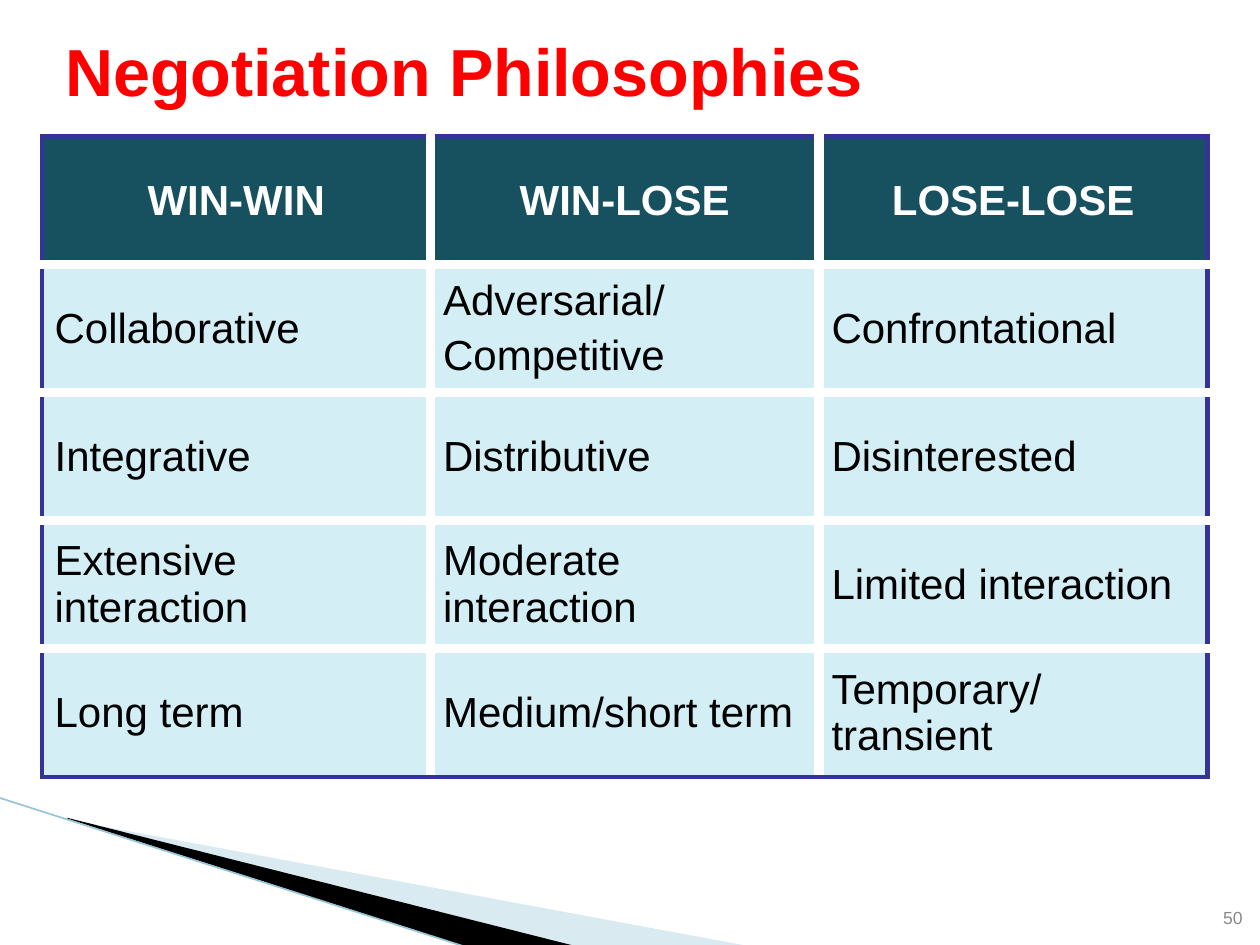
from dataclasses import dataclass

import lxml.etree
import pptx
import pptx.dml.color
import pptx.enum.shapes
import pptx.enum.text
import pptx.oxml
import pptx.oxml.ns
import pptx.util

Pt = pptx.util.Pt
qn = pptx.oxml.ns.qn
Align = pptx.enum.text.PP_ALIGN
Anchor = pptx.enum.text.MSO_ANCHOR


@dataclass(frozen=True)
class Theme:
    font: str = "Arial"
    title: str = "FF0000"
    header: str = "175160"
    body: str = "D3EEF5"
    frame: str = "333399"
    white: str = "FFFFFF"
    black: str = "000000"
    wedge: str = "A0CBDC"
    edge: str = "97C5D8"
    number: str = "898989"
    title_size: float = 38
    table_size: float = 24
    number_size: float = 10


THEME = Theme()

PHILOSOPHIES = [
    ["WIN-WIN", "WIN-LOSE", "LOSE-LOSE"],
    ["Collaborative", "Adversarial/\nCompetitive", "Confrontational"],
    ["Integrative", "Distributive", "Disinterested"],
    ["Extensive interaction", "Moderate interaction", "Limited interaction"],
    ["Long term", "Medium/short term", "Temporary/ transient"],
]


def rgb(color):
    return pptx.dml.color.RGBColor.from_string(color)


def write(paragraph, text, size, color, bold=False, align=Align.LEFT):
    paragraph.alignment = align
    run = paragraph.add_run()
    run.text = text
    run.font.name = THEME.font
    run.font.size = Pt(size)
    run.font.bold = bold
    run.font.color.rgb = rgb(color)


def add_title(slide, text):
    title = slide.shapes.title
    title.left, title.top, title.width, title.height = Pt(30), Pt(12), Pt(612), Pt(56)
    title.text_frame.vertical_anchor = Anchor.MIDDLE
    write(title.text_frame.paragraphs[0], text, THEME.title_size, THEME.title, bold=True)


def add_wedge(slide, points, color, opacity=100):
    builder = slide.shapes.build_freeform(*map(Pt, points[0]))
    builder.add_line_segments([tuple(map(Pt, point)) for point in points[1:]])
    wedge = builder.convert_to_shape()
    wedge.shadow.inherit = False
    wedge.line.fill.background()
    wedge.fill.solid()
    wedge.fill.fore_color.rgb = rgb(color)
    if opacity < 100:
        tint = wedge.fill._xPr.find(".//" + qn("a:srgbClr"))
        lxml.etree.SubElement(tint, qn("a:alpha"), val=str(opacity * 1000))


def add_edge(slide, start, end):
    edge = slide.shapes.add_connector(
        pptx.enum.shapes.MSO_CONNECTOR.STRAIGHT, *map(Pt, start + end))
    edge.line.color.rgb = rgb(THEME.edge)
    edge.line.width = Pt(0.95)
    lxml.etree.SubElement(edge._element.spPr, qn("a:effectLst"))


def set_borders(cell, outer_sides):
    properties = cell._tc.get_or_add_tcPr()
    for side in "LRTB":
        color, width = (THEME.frame, 3) if side in outer_sides else (THEME.white, 6)
        border = lxml.etree.SubElement(properties, qn("a:ln" + side), w=str(Pt(width)))
        fill = lxml.etree.SubElement(border, qn("a:solidFill"))
        lxml.etree.SubElement(fill, qn("a:srgbClr"), val=color)


def fill_cell(cell, text, is_header):
    cell.fill.solid()
    cell.fill.fore_color.rgb = rgb(THEME.header if is_header else THEME.body)
    cell.vertical_anchor = Anchor.MIDDLE
    for index, line in enumerate(text.split("\n")):
        frame = cell.text_frame
        paragraph = frame.add_paragraph() if index else frame.paragraphs[0]
        if index:
            paragraph.space_before = Pt(0.2 * THEME.table_size)
        write(paragraph, line, THEME.table_size,
              THEME.white if is_header else THEME.black,
              is_header, Align.CENTER if is_header else Align.LEFT)


def add_comparison(slide, rows):
    last_row, last_column = len(rows) - 1, len(rows[0]) - 1
    table = slide.shapes.add_table(
        len(rows), len(rows[0]), Pt(24), Pt(78), Pt(666), Pt(366)).table
    table.horz_banding = False
    for r, row in enumerate(rows):
        for c, text in enumerate(row):
            outer = {"L": c == 0, "R": c == last_column, "T": r == 0, "B": r == last_row}
            cell = table.cell(r, c)
            set_borders(cell, [side for side in outer if outer[side]])
            fill_cell(cell, text, r == 0)


def add_page_number(slide, number):
    frame = slide.shapes.add_textbox(Pt(681), Pt(505), Pt(29), Pt(29)).text_frame
    frame.word_wrap = True
    frame.vertical_anchor = Anchor.BOTTOM
    frame.margin_left = frame.margin_right = 0
    write(frame.paragraphs[0], number, THEME.number_size, THEME.number, align=Align.RIGHT)


def main():
    deck = pptx.Presentation()
    deck.slide_width, deck.slide_height = Pt(720), Pt(540)
    slide = deck.slides.add_slide(deck.slide_layouts[5])
    slide.background.fill.solid()
    slide.background.fill.fore_color.rgb = rgb(THEME.white)
    add_wedge(slide, [(39.6, 468.7), (428.4, 540.7), (328.3, 540.7), (39.6, 468)],
              THEME.wedge, opacity=40)
    add_wedge(slide, [(38.2, 467.3), (329, 540.7), (267.8, 541.4), (38.9, 468)],
              THEME.black)
    add_edge(slide, (-0.7, 455.8), (267.1, 541.4))
    add_comparison(slide, PHILOSOPHIES)
    add_page_number(slide, "50")
    add_title(slide, "Negotiation Philosophies")
    deck.save("out.pptx")


if __name__ == "__main__":
    main()
